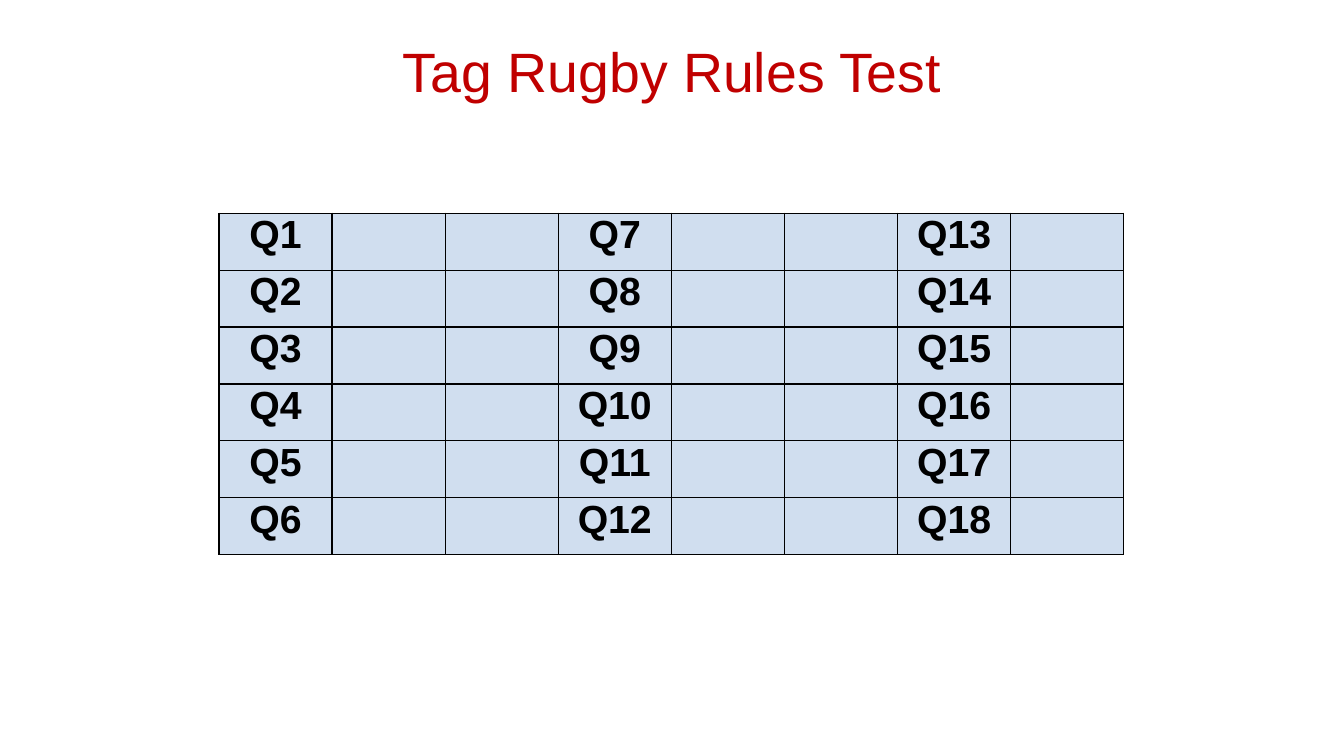
from lxml.etree import SubElement
from pptx import Presentation
from pptx.dml.color import RGBColor
from pptx.enum.text import MSO_ANCHOR, PP_ALIGN
from pptx.oxml.ns import qn
from pptx.util import Pt

# Content
TITLE = "Tag Rugby Rules Test"
QUESTION_COLUMNS = {0: 1, 3: 7, 6: 13}  # table column: first question number
ROWS, COLUMNS = 6, 8

# Style and layout, in points
FONT = "Arial"
RED = RGBColor(0xC0, 0x00, 0x00)
BLACK = RGBColor(0x00, 0x00, 0x00)
PALE_BLUE = RGBColor(0xD0, 0xDE, 0xEF)
TABLE_LEFT, TABLE_TOP = 156.4, 152.3
COLUMN_WIDTH, ROW_HEIGHT = 80.8, 40.65


def write_text(frame, text, *, size, color, bold=False, margin=0, line_spacing=1.0):
    frame.word_wrap = True
    frame.margin_left = frame.margin_right = Pt(margin)
    frame.margin_top = frame.margin_bottom = Pt(margin)
    paragraph = frame.paragraphs[0]
    paragraph.alignment = PP_ALIGN.CENTER
    paragraph.line_spacing = line_spacing
    run = paragraph.add_run()
    run.text = text
    run.font.name = FONT
    run.font.size = Pt(size)
    run.font.bold = bold
    run.font.color.rgb = color


def add_borders(cell):
    properties = cell._tc.get_or_add_tcPr()
    for side in ("lnL", "lnR", "lnT", "lnB"):
        line = SubElement(properties, qn(f"a:{side}"), w=str(Pt(1)))
        fill = SubElement(line, qn("a:solidFill"))
        SubElement(fill, qn("a:srgbClr"), val=str(BLACK))


def main():
    presentation = Presentation()
    presentation.slide_width, presentation.slide_height = Pt(960), Pt(540)
    slide = presentation.slides.add_slide(presentation.slide_layouts[6])

    # Title
    title = slide.shapes.add_textbox(Pt(66), Pt(27.4), Pt(828), Pt(51.8))
    title.text_frame.vertical_anchor = MSO_ANCHOR.MIDDLE
    write_text(title.text_frame, TITLE, size=39.6, color=RED, margin=7.2, line_spacing=0.9)

    # Answer grid
    table = slide.shapes.add_table(
        ROWS, COLUMNS, Pt(TABLE_LEFT), Pt(TABLE_TOP),
        Pt(COLUMN_WIDTH * COLUMNS), Pt(ROW_HEIGHT * ROWS)).table
    table.first_row = table.horz_banding = False
    for column in table.columns:
        column.width = Pt(COLUMN_WIDTH)
    for row_index, row in enumerate(table.rows):
        row.height = Pt(ROW_HEIGHT)
        for column_index, cell in enumerate(row.cells):
            add_borders(cell)
            cell.fill.solid()
            cell.fill.fore_color.rgb = PALE_BLUE
            cell.margin_left = cell.margin_right = 0
            cell.margin_top = cell.margin_bottom = 0
            if column_index in QUESTION_COLUMNS:
                number = QUESTION_COLUMNS[column_index] + row_index
                write_text(cell.text_frame, f"Q{number}", size=28, color=BLACK, bold=True)

    presentation.save("out.pptx")


if __name__ == "__main__":
    main()
